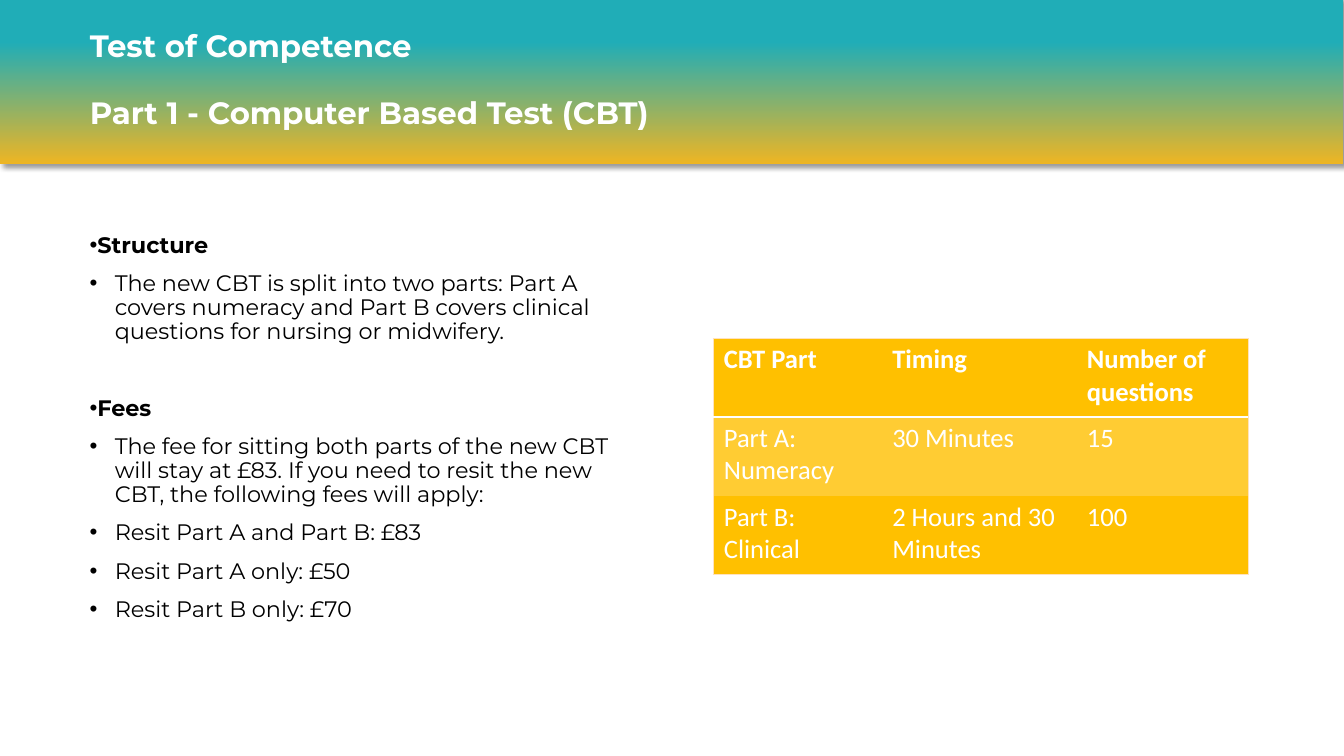
from dataclasses import dataclass

from lxml import etree
from pptx import Presentation
from pptx import util as u
from pptx.dml.color import RGBColor
from pptx.enum import shapes, text
from pptx.oxml import ns

COLORS = {
    "teal": "20ADB7", "gold": "EEB523", "white": "FFFFFF", "black": "000000",
    "amber": "FFC000", "light_amber": "FFCC33", "edge": "FFE2BD",
}
BODY_FONT = "Montserrat"
TABLE_FONT = "Calibri"
NO_TABLE_STYLE = "{2D5ABB26-0587-4C30-8999-92F81FD0307C}"


@dataclass
class Bullet:
    label: str
    heading: bool = False
    space_before: float = 10


BULLETS = [
    Bullet("Structure", heading=True),
    Bullet("The new CBT is split into two parts: Part A covers numeracy and "
           "Part B covers clinical questions for nursing or midwifery."),
    Bullet("Fees", heading=True, space_before=37.5),
    Bullet("The fee for sitting both parts of the new CBT will stay at £83. "
           "If you need to resit the new CBT, the following fees will apply:"),
    Bullet("Resit Part A and Part B: £83"),
    Bullet("Resit Part A only: £50"),
    Bullet("Resit Part B only: £70"),
]
TITLE_LINES = ["Test of Competence", "Part 1 - Computer Based Test (CBT)"]
TABLE_ROWS = [
    ["CBT Part", "Timing", "Number of questions"],
    ["Part A: Numeracy", "30 Minutes", "15"],
    ["Part B: Clinical", "2 Hours and 30 Minutes", "100"],
]
COLUMN_WIDTHS = [1.67, 1.93, 1.71]
ROW_HEIGHT = 0.78


def rgb(name: str) -> RGBColor:
    return RGBColor.from_string(COLORS[name])


def box(left: float, top: float, width: float, height: float) -> list:
    return [u.Inches(v) for v in (left, top, width, height)]


def add_xml(parent, tag: str, **attributes: str):
    return etree.SubElement(parent, ns.qn(tag), attributes)


def style(p, font: str, size: float, color: str, bold: bool) -> None:
    p.font.name = font
    p.font.size = u.Pt(size)
    p.font.bold = bold
    p.font.color.rgb = rgb(color)


def add_band(slide) -> None:
    sp = slide.shapes.add_shape(shapes.MSO_SHAPE.RECTANGLE, *box(-0.01, -0.03, 13.33, 1.66))
    sp.fill.gradient()
    sp.fill.gradient_angle = 270
    for stop, position, color in zip(sp.fill.gradient_stops, (0.27, 1), ("teal", "gold")):
        stop.position = position
        stop.color.rgb = rgb(color)
    sp.line.fill.background()
    sp.shadow.inherit = False
    effects = sp._element.spPr.find(ns.qn("a:effectLst"))
    shadow = add_xml(effects, "a:outerShdw", blurRad=str(u.Pt(4)), dist=str(u.Pt(3)),
                     dir="2700000", algn="tl", rotWithShape="0")
    add_xml(add_xml(shadow, "a:srgbClr", val=COLORS["black"]), "a:alpha", val="40000")
    slide.shapes._spTree.insert(2, sp._element)


def format_title(slide) -> None:
    title = slide.shapes.title
    title.left, title.top, title.width, title.height = box(0.79, 0.25, 11.46, 1.1)
    tf = title.text_frame
    tf.auto_size = text.MSO_AUTO_SIZE.NONE
    tf.vertical_anchor = text.MSO_ANCHOR.MIDDLE
    tf.text = "\n".join(TITLE_LINES)
    for i, p in enumerate(tf.paragraphs):
        p.alignment = text.PP_ALIGN.LEFT
        p.line_spacing = 0.9
        p.space_before = u.Pt(24 * i)
        style(p, BODY_FONT, 22, "white", True)


def add_bullets(slide) -> None:
    tf = slide.shapes.add_textbox(*box(0.79, 2.27, 5.73, 4.27)).text_frame
    tf.word_wrap = True
    for i, bullet in enumerate(BULLETS):
        p = tf.add_paragraph() if i else tf.paragraphs[0]
        p.text = bullet.label
        p.line_spacing = 0.9
        p.space_before = u.Pt(bullet.space_before)
        style(p, BODY_FONT, 16, "black", bullet.heading)
        pPr = p._p.get_or_add_pPr()
        pPr.set("marL", str(u.Inches(0 if bullet.heading else 0.25)))
        pPr.set("indent", str(u.Inches(-0.25)))
        bullet_font = pPr.makeelement(ns.qn("a:buFont"), {"typeface": "Arial"})
        bullet_char = pPr.makeelement(ns.qn("a:buChar"), {"char": "•"})
        pPr.find(ns.qn("a:defRPr")).addprevious(bullet_font)
        bullet_font.addnext(bullet_char)


def add_border(cell, side: str, color: str, width: float) -> None:
    line = add_xml(cell._tc.get_or_add_tcPr(), f"a:ln{side}", w=str(u.Pt(width)))
    add_xml(add_xml(line, "a:solidFill"), "a:srgbClr", val=COLORS[color])


def add_test_table(slide) -> None:
    n_rows, n_cols = len(TABLE_ROWS), len(COLUMN_WIDTHS)
    frame = slide.shapes.add_table(
        n_rows, n_cols, *box(7.07, 3.36, sum(COLUMN_WIDTHS), ROW_HEIGHT * n_rows))
    next(frame._element.iter(ns.qn("a:tableStyleId"))).text = NO_TABLE_STYLE
    table = frame.table
    for column, width in zip(table.columns, COLUMN_WIDTHS):
        column.width = u.Inches(width)
    for i, values in enumerate(TABLE_ROWS):
        table.rows[i].height = u.Inches(ROW_HEIGHT)
        for j, value in enumerate(values):
            cell = table.cell(i, j)
            cell.text = value
            cell.margin_left = cell.margin_right = u.Inches(0.11)
            cell.margin_top = cell.margin_bottom = u.Inches(0.05)
            style(cell.text_frame.paragraphs[0], TABLE_FONT, 19, "white", i == 0)
            outer_sides = {"L": j == 0, "R": j == n_cols - 1, "T": i == 0, "B": i == n_rows - 1}
            for side, outer in outer_sides.items():
                if outer:
                    add_border(cell, side, "edge", 0.5)
            if i == 0:
                add_border(cell, "B", "white", 1.5)
            cell.fill.solid()
            cell.fill.fore_color.rgb = rgb("light_amber" if i % 2 else "amber")


def main() -> None:
    prs = Presentation()
    prs.slide_width, prs.slide_height = u.Inches(13.33), u.Inches(7.5)
    slide = prs.slides.add_slide(prs.slide_layouts[5])
    add_band(slide)
    format_title(slide)
    add_bullets(slide)
    add_test_table(slide)
    prs.save("out.pptx")


if __name__ == "__main__":
    main()
